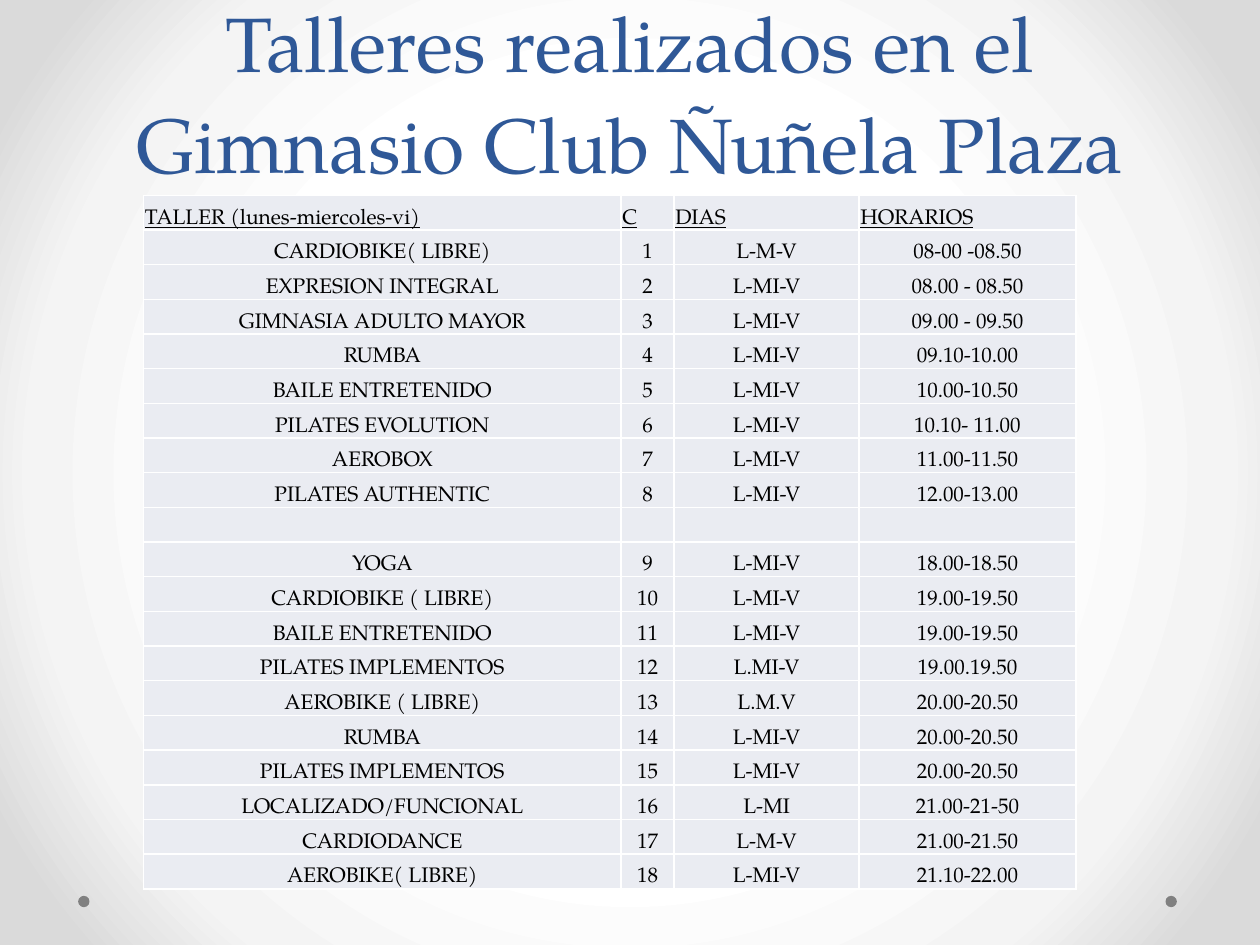
import pptx
import pptx.dml.color
import pptx.enum.shapes
import pptx.enum.text
import pptx.oxml
import pptx.oxml.ns
import pptx.util
from dataclasses import dataclass
from lxml import etree

Inches = pptx.util.Inches
Pt = pptx.util.Pt
RGB = pptx.dml.color.RGBColor.from_string
Align = pptx.enum.text.PP_ALIGN
Anchor = pptx.enum.text.MSO_ANCHOR
qn = pptx.oxml.ns.qn
NS = pptx.oxml.ns.nsdecls("a")


@dataclass(frozen=True)
class Theme:
    font: str = "TeX Gyre Pagella"
    title: str = "2F5897"
    text: str = "000000"
    cell: str = "EAECF2"
    border: str = "FFFFFF"
    dot: str = "808080"
    backdrop: tuple = ((50, "FFFFFF"), (76, "F4F4F4"), (92, "DADADA"))
    title_size: int = 44
    title_leading: int = 58
    table_size: int = 12


THEME = Theme()
TITLE = "Talleres realizados en el Gimnasio Club Ñuñela Plaza"
HEADINGS = ("TALLER (lunes-miercoles-vi)", "C", "DIAS", "HORARIOS")
COLUMN_WIDTHS = (3.79, 0.42, 1.47, 1.72)
MORNING = [
    ("CARDIOBIKE( LIBRE)", "L-M-V", "08-00 -08.50"),
    ("EXPRESION INTEGRAL", "L-MI-V", "08.00 - 08.50"),
    ("GIMNASIA ADULTO MAYOR", "L-MI-V", "09.00 - 09.50"),
    ("RUMBA", "L-MI-V", "09.10-10.00"),
    ("BAILE ENTRETENIDO", "L-MI-V", "10.00-10.50"),
    ("PILATES EVOLUTION", "L-MI-V", "10.10- 11.00"),
    ("AEROBOX", "L-MI-V", "11.00-11.50"),
    ("PILATES AUTHENTIC", "L-MI-V", "12.00-13.00"),
]
EVENING = [
    ("YOGA", "L-MI-V", "18.00-18.50"),
    ("CARDIOBIKE ( LIBRE)", "L-MI-V", "19.00-19.50"),
    ("BAILE ENTRETENIDO", "L-MI-V", "19.00-19.50"),
    ("PILATES IMPLEMENTOS", "L.MI-V", "19.00.19.50"),
    ("AEROBIKE ( LIBRE)", "L.M.V", "20.00-20.50"),
    ("RUMBA", "L-MI-V", "20.00-20.50"),
    ("PILATES IMPLEMENTOS", "L-MI-V", "20.00-20.50"),
    ("LOCALIZADO/FUNCIONAL", "L-MI", "21.00-21-50"),
    ("CARDIODANCE", "L-M-V", "21.00-21.50"),
    ("AEROBIKE( LIBRE)", "L-MI-V", "21.10-22.00"),
]


def apply(target, values):
    for name, value in values.items():
        setattr(target, name, value)


def write(paragraph, text, size, color, underline=False):
    run = paragraph.add_run()
    run.text = text
    apply(run.font, {"name": THEME.font, "size": Pt(size), "underline": underline})
    run.font.color.rgb = RGB(color)


def paint_backdrop(slide):
    fill = slide.background.fill
    fill.gradient()
    stops = "".join(
        f'<a:gs pos="{position * 1000}"><a:srgbClr val="{color}"/></a:gs>'
        for position, color in THEME.backdrop
    )
    gradient = pptx.oxml.parse_xml(
        f'<a:gradFill {NS} rotWithShape="1"><a:gsLst>{stops}</a:gsLst><a:path path="circle">'
        '<a:fillToRect l="50000" t="50000" r="50000" b="50000"/></a:path></a:gradFill>'
    )
    previous = slide.background._cSld.find(".//" + qn("a:gradFill"))
    previous.getparent().replace(previous, gradient)


def add_dot(slide, left):
    dot = slide.shapes.add_shape(
        pptx.enum.shapes.MSO_SHAPE.OVAL, Inches(left), Inches(7.11), Inches(0.09), Inches(0.09)
    )
    dot.shadow.inherit = False
    dot.fill.solid()
    dot.fill.fore_color.rgb = RGB(THEME.dot)
    dot.line.fill.background()


def set_title(slide):
    title = slide.shapes.title
    apply(title, {"left": Inches(0.5), "top": Inches(0), "width": Inches(9), "height": Inches(1.55)})
    frame = title.text_frame
    apply(frame, {"word_wrap": True, "vertical_anchor": Anchor.BOTTOM,
                  "auto_size": pptx.enum.text.MSO_AUTO_SIZE.NONE})
    paragraph = frame.paragraphs[0]
    apply(paragraph, {"alignment": Align.CENTER, "line_spacing": Pt(THEME.title_leading)})
    write(paragraph, TITLE, THEME.title_size, THEME.title)


def add_borders(cell):
    properties = cell._tc.get_or_add_tcPr()
    for side in ("lnL", "lnR", "lnT", "lnB"):
        properties.append(pptx.oxml.parse_xml(
            f'<a:{side} {NS} w="{Pt(1)}"><a:solidFill>'
            f'<a:srgbClr val="{THEME.border}"/></a:solidFill></a:{side}>'
        ))


def fill_cell(cell, text, heading):
    apply(cell, {"margin_left": Inches(0.01), "margin_right": Inches(0.01),
                 "margin_top": Inches(0.01), "margin_bottom": 0,
                 "vertical_anchor": Anchor.BOTTOM})
    add_borders(cell)
    cell.fill.solid()
    cell.fill.fore_color.rgb = RGB(THEME.cell)
    paragraph = cell.text_frame.paragraphs[0]
    paragraph.alignment = Align.LEFT if heading else Align.CENTER
    if text:
        write(paragraph, text, THEME.table_size, THEME.text, heading)
    else:
        etree.SubElement(paragraph._p, qn("a:endParaRPr"), sz=str(THEME.table_size * 100))


def timetable_rows():
    numbered = [
        (workshop, str(number), days, hours)
        for number, (workshop, days, hours) in enumerate(MORNING + EVENING, 1)
    ]
    split = len(MORNING)
    return [HEADINGS, *numbered[:split], ("",) * len(HEADINGS), *numbered[split:]]


def add_timetable(slide):
    rows = timetable_rows()
    height = Inches(5.51)
    timetable = slide.shapes.add_table(
        len(rows), len(HEADINGS), Inches(1.14), Inches(1.55), Inches(sum(COLUMN_WIDTHS)), height
    ).table
    apply(timetable, {"first_row": False, "horz_banding": False})
    for column, width in zip(timetable.columns, COLUMN_WIDTHS):
        column.width = Inches(width)
    for index, (row, texts) in enumerate(zip(timetable.rows, rows)):
        row.height = height // len(rows)
        for cell, text in zip(row.cells, texts):
            fill_cell(cell, text, index == 0)


def main():
    deck = pptx.Presentation()
    apply(deck, {"slide_width": Inches(10), "slide_height": Inches(7.5)})
    slide = deck.slides.add_slide(deck.slide_layouts.get_by_name("Title Only"))
    paint_backdrop(slide)
    for left in (9.25, 0.62):
        add_dot(slide, left)
    set_title(slide)
    add_timetable(slide)
    deck.save("out.pptx")


if __name__ == "__main__":
    main()
